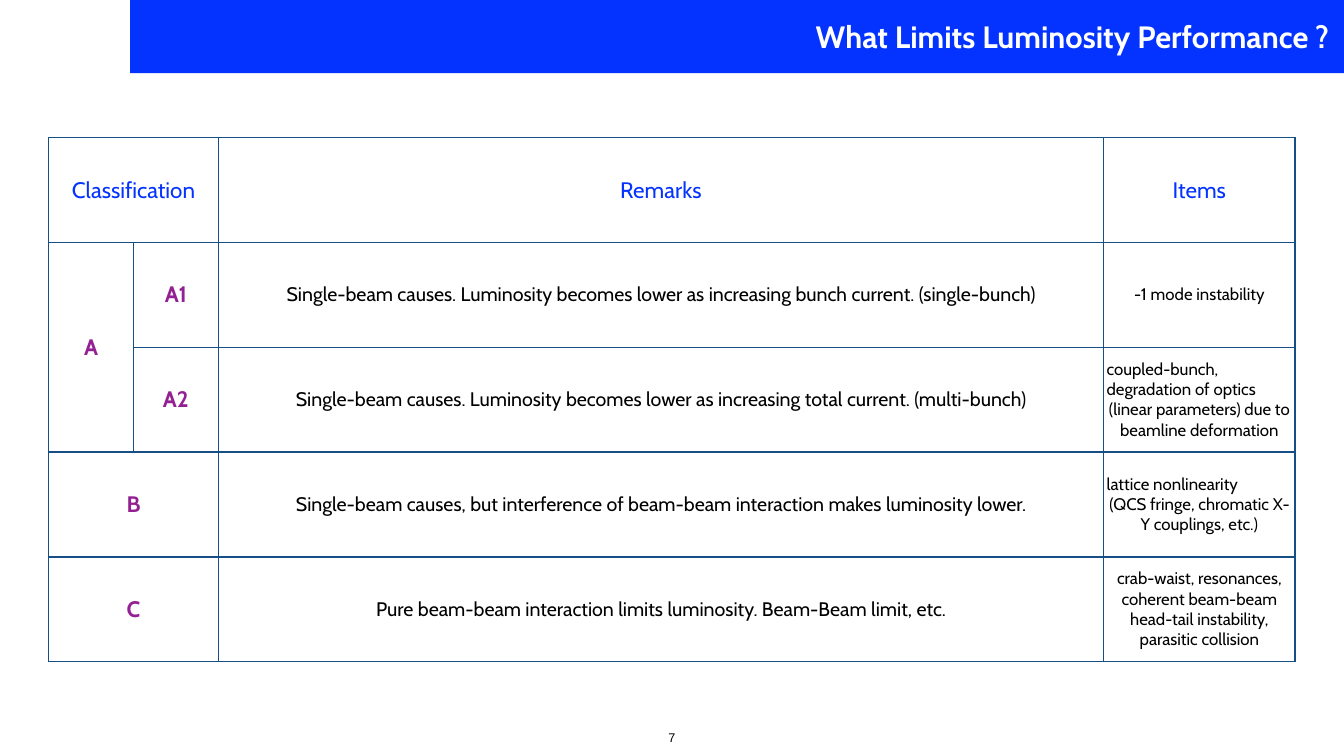
from lxml.etree import SubElement
from pptx import Presentation
from pptx.dml.color import RGBColor
from pptx.enum.shapes import MSO_SHAPE as Shape
from pptx.enum.text import MSO_ANCHOR as Anchor, PP_ALIGN as Align
from pptx.oxml import parse_xml
from pptx.oxml.ns import nsdecls, qn
from pptx.util import Emu, Pt

PX = 9144
BLUE, PURPLE, BLACK, WHITE, BORDER = "0433FF", "942193", "000000", "FFFFFF", "164F86"
COLUMNS = [168, 168, 1757, 380]
ROW_HEIGHT = 208
HEADER = ["Classification", "Remarks", "Items"]
ROWS = [
    ("A1", "Single-beam causes. Luminosity becomes lower as increasing bunch current. (single-bunch)",
     ["-1 mode instability"]),
    ("A2", "Single-beam causes. Luminosity becomes lower as increasing total current. (multi-bunch)",
     ["coupled-bunch, degradation of optics", "(linear parameters) due to beamline deformation"]),
    ("B", "Single-beam causes, but interference of beam-beam interaction makes luminosity lower.",
     ["lattice nonlinearity", "(QCS fringe, chromatic X-Y couplings, etc.)"]),
    ("C", "Pure beam-beam interaction limits luminosity. Beam-Beam limit, etc.",
     ["crab-waist, resonances, coherent beam-beam head-tail instability, parasitic collision"]),
]


def px(length):
    """Turn whole pixels into EMU."""
    return Emu(length * PX)


def color(value):
    """Turn a hex string into a colour."""
    return RGBColor.from_string(value)


def set_margins(target, margin):
    """Give a cell or text frame the same margin on every side."""
    target.margin_left = target.margin_right = px(margin)
    target.margin_top = target.margin_bottom = px(margin)


def write(paragraph, text, size, ink, bold=False, font="Cabin", align=Align.CENTER):
    """Add one styled run to a paragraph."""
    paragraph.alignment = align
    run = paragraph.add_run()
    run.text = text
    run.font.name = font
    run.font.size = Pt(size)
    run.font.bold = bold
    run.font.color.rgb = color(ink)


def add_title(slide, text):
    """Draw the title band with right-aligned text."""
    band = slide.shapes.add_shape(Shape.RECTANGLE, px(258), px(0), px(2409), px(145))
    band.shadow.inherit = False
    band.fill.solid()
    band.fill.fore_color.rgb = color(BLUE)
    band.line.fill.background()
    frame = band.text_frame
    frame.word_wrap = True
    frame.vertical_anchor = Anchor.MIDDLE
    set_margins(frame, 29)
    write(frame.paragraphs[0], text, 44, WHITE, bold=True, align=Align.RIGHT)


def add_page_number(slide, text):
    """Place the page number at the bottom centre."""
    box = slide.shapes.add_textbox(px(1318), px(1440), px(31), px(46))
    box.text_frame.word_wrap = False
    set_margins(box.text_frame, 8)
    write(box.text_frame.paragraphs[0], text, 18, BLACK, font="Arial")


def style_cell(cell):
    """Give a cell its fill, margins, anchor and borders."""
    cell.fill.solid()
    cell.fill.fore_color.rgb = color(WHITE)
    cell.vertical_anchor = Anchor.MIDDLE
    set_margins(cell, 6)
    properties = cell._tc.get_or_add_tcPr()
    for index, side in enumerate(["lnL", "lnR", "lnT", "lnB"]):
        line = parse_xml(f'<a:{side} {nsdecls("a")} w="{Pt(2)}"/>')
        fill = SubElement(line, qn("a:solidFill"))
        SubElement(fill, qn("a:srgbClr"), val=BORDER)
        properties.insert(index, line)


def fill_cell(cell, lines, size, ink, bold=False):
    """Write lines into a cell, with all but the last left-aligned."""
    frame = cell.text_frame
    for index, text in enumerate(lines):
        paragraph = frame.add_paragraph() if index else frame.paragraphs[0]
        align = Align.CENTER if index == len(lines) - 1 else Align.LEFT
        write(paragraph, text, size, ink, bold, align=align)


def add_limits_table(slide):
    """Build the classification table."""
    row_count = len(ROWS) + 1
    table = slide.shapes.add_table(row_count, len(COLUMNS), px(97), px(273),
                                   px(sum(COLUMNS)), px(ROW_HEIGHT * row_count)).table
    table.first_row = table.horz_banding = False
    for column, width in zip(table.columns, COLUMNS):
        column.width = px(width)
    for row in table.rows:
        row.height = px(ROW_HEIGHT)
        for cell in row.cells:
            style_cell(cell)
    for row in (0, 3, 4):
        table.cell(row, 0).merge(table.cell(row, 1))
    table.cell(1, 0).merge(table.cell(2, 0))

    for column, text in zip((0, 2, 3), HEADER):
        fill_cell(table.cell(0, column), [text], 32, BLUE)
    fill_cell(table.cell(1, 0), ["A"], 32, PURPLE, bold=True)
    for row, (label, remark, items) in enumerate(ROWS, start=1):
        label_column = 1 if label.startswith("A") else 0
        fill_cell(table.cell(row, label_column), [label], 32, PURPLE, bold=True)
        fill_cell(table.cell(row, 2), [remark], 28, BLACK)
        fill_cell(table.cell(row, 3), items, 24, BLACK)


def main():
    """Build and save the slide."""
    presentation = Presentation()
    presentation.slide_width, presentation.slide_height = px(2667), px(1500)
    slide = presentation.slides.add_slide(presentation.slide_layouts[6])
    add_title(slide, "What Limits Luminosity Performance ?")
    add_page_number(slide, "7")
    add_limits_table(slide)
    presentation.save("out.pptx")


if __name__ == "__main__":
    main()
